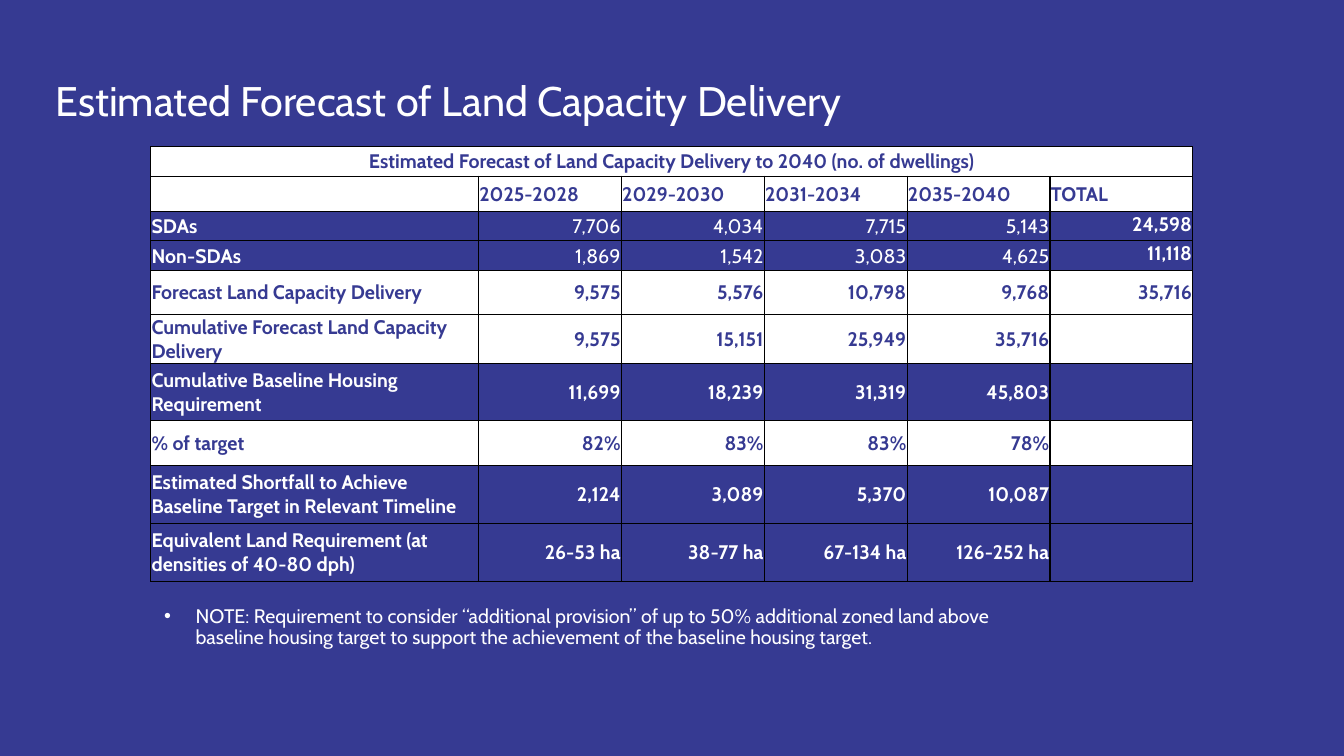
import dataclasses

import lxml.etree
import pptx
import pptx.dml.color
import pptx.enum.text
import pptx.oxml.ns
import pptx.util

Cm = pptx.util.Cm
Pt = pptx.util.Pt
Align = pptx.enum.text.PP_ALIGN
Anchor = pptx.enum.text.MSO_ANCHOR
qn = pptx.oxml.ns.qn

FONT = "Cabin"
HUES = {"navy": "363A92", "white": "FFFFFF", "black": "000000"}
WIDTHS = [8.26] + [3.6] * 5


@dataclasses.dataclass
class Row:
    high: float
    cells: list[str]
    light: bool = False
    head: bool = False
    plain: bool = False


ROWS = [
    Row(0.74, ["Estimated Forecast of Land Capacity Delivery to 2040 (no. of dwellings)"] + [""] * 5,
        light=True, head=True),
    Row(0.89, ["", "2025-2028", "2029-2030", "2031-2034", "2035-2040", "TOTAL"], light=True, head=True),
    Row(0.74, ["SDAs", "7,706", "4,034", "7,715", "5,143", "24,598"], plain=True),
    Row(0.74, ["Non-SDAs", "1,869", "1,542", "3,083", "4,625", "11,118"], plain=True),
    Row(1.12, ["Forecast Land Capacity Delivery", "9,575", "5,576", "10,798", "9,768", "35,716"], light=True),
    Row(1.23, ["Cumulative Forecast Land Capacity Delivery", "9,575", "15,151", "25,949", "35,716", ""],
        light=True),
    Row(1.44, ["Cumulative Baseline Housing Requirement", "11,699", "18,239", "31,319", "45,803", ""]),
    Row(1.13, ["% of target", "82%", "83%", "83%", "78%", ""], light=True),
    Row(1.46, ["Estimated Shortfall to Achieve Baseline Target in Relevant Timeline",
               "2,124", "3,089", "5,370", "10,087", ""]),
    Row(1.46, ["Equivalent Land Requirement (at densities of 40-80 dph)",
               "26-53 ha", "38-77 ha", "67-134 ha", "126-252 ha", ""]),
]


def get_hue(name: str) -> pptx.dml.color.RGBColor:
    return pptx.dml.color.RGBColor.from_string(HUES[name])


def set_font(para, size: float, hue: str, bold: bool = False) -> None:
    font = para.font
    font.name = FONT
    font.size = Pt(size)
    font.bold = bold
    font.color.rgb = get_hue(hue)


def add_text(slide, box: tuple[float, float, float, float], text: str, anchor):
    frame = slide.shapes.add_textbox(*map(Cm, box)).text_frame
    frame.word_wrap = True
    frame.vertical_anchor = anchor
    frame.margin_left = frame.margin_right = frame.margin_top = frame.margin_bottom = 0
    para = frame.paragraphs[0]
    para.text = text
    return para


def add_edges(cell) -> None:
    props = cell._tc.get_or_add_tcPr()
    for spot, side in enumerate(("lnL", "lnR", "lnT", "lnB")):
        line = lxml.etree.Element(qn(f"a:{side}"), w=str(Pt(1)))
        fill = lxml.etree.SubElement(line, qn("a:solidFill"))
        lxml.etree.SubElement(fill, qn("a:srgbClr"), val=HUES["black"])
        props.insert(spot, line)


def fill_cell(cell, row: Row, col: int) -> None:
    total = col == len(WIDTHS) - 1
    cell.margin_left = cell.margin_right = cell.margin_top = Cm(0.02)
    cell.margin_bottom = 0
    cell.vertical_anchor = Anchor.TOP if row.plain and total else Anchor.MIDDLE
    cell.fill.solid()
    cell.fill.fore_color.rgb = get_hue("white" if row.light else "navy")
    add_edges(cell)
    para = cell.text_frame.paragraphs[0]
    para.text = row.cells[col]
    para.alignment = Align.LEFT if row.head or col == 0 else Align.RIGHT
    bold = not row.plain or col == 0 or total
    set_font(para, 14, "navy" if row.light else "white", bold)


def add_grid(slide) -> None:
    wide, high = sum(WIDTHS), sum(row.high for row in ROWS)
    table = slide.shapes.add_table(
        len(ROWS), len(WIDTHS), Cm(3.8), Cm(3.7), Cm(wide), Cm(high)).table
    table.first_row = table.horz_banding = False
    for col, width in enumerate(WIDTHS):
        table.columns[col].width = Cm(width)
    for spot, row in enumerate(ROWS):
        table.rows[spot].height = Cm(row.high)
        for col in range(len(WIDTHS)):
            fill_cell(table.cell(spot, col), row, col)
    title = table.cell(0, 0)
    title.merge(table.cell(0, len(WIDTHS) - 1))
    title.text_frame.paragraphs[0].alignment = Align.CENTER


def add_note(slide) -> None:
    note = add_text(
        slide, (4.14, 15.29, 22.4, 2.08),
        "NOTE: Requirement to consider “additional provision” of up to 50% additional zoned land above "
        "baseline housing target to support the achievement of the baseline housing target.", Anchor.TOP)
    note.line_spacing = 0.9
    note.space_after = Pt(8)
    props = note._p.get_or_add_pPr()
    props.set("marL", str(Cm(0.79)))
    props.set("indent", str(Cm(-0.79)))
    lxml.etree.SubElement(props, qn("a:buFont"), typeface="Arial")
    lxml.etree.SubElement(props, qn("a:buChar"), char="•")
    set_font(note, 14, "white")


def main() -> None:
    deck = pptx.Presentation()
    deck.slide_width, deck.slide_height = Cm(33.87), Cm(19.05)
    slide = deck.slides.add_slide(deck.slide_layouts[6])
    slide.background.fill.solid()
    slide.background.fill.fore_color.rgb = get_hue("navy")
    title = add_text(slide, (1.4, 1.32, 25.53, 2.39),
                     "Estimated Forecast of Land Capacity Delivery", Anchor.MIDDLE)
    set_font(title, 29.5, "white")
    add_grid(slide)
    add_note(slide)
    deck.save("out.pptx")


if __name__ == "__main__":
    main()
